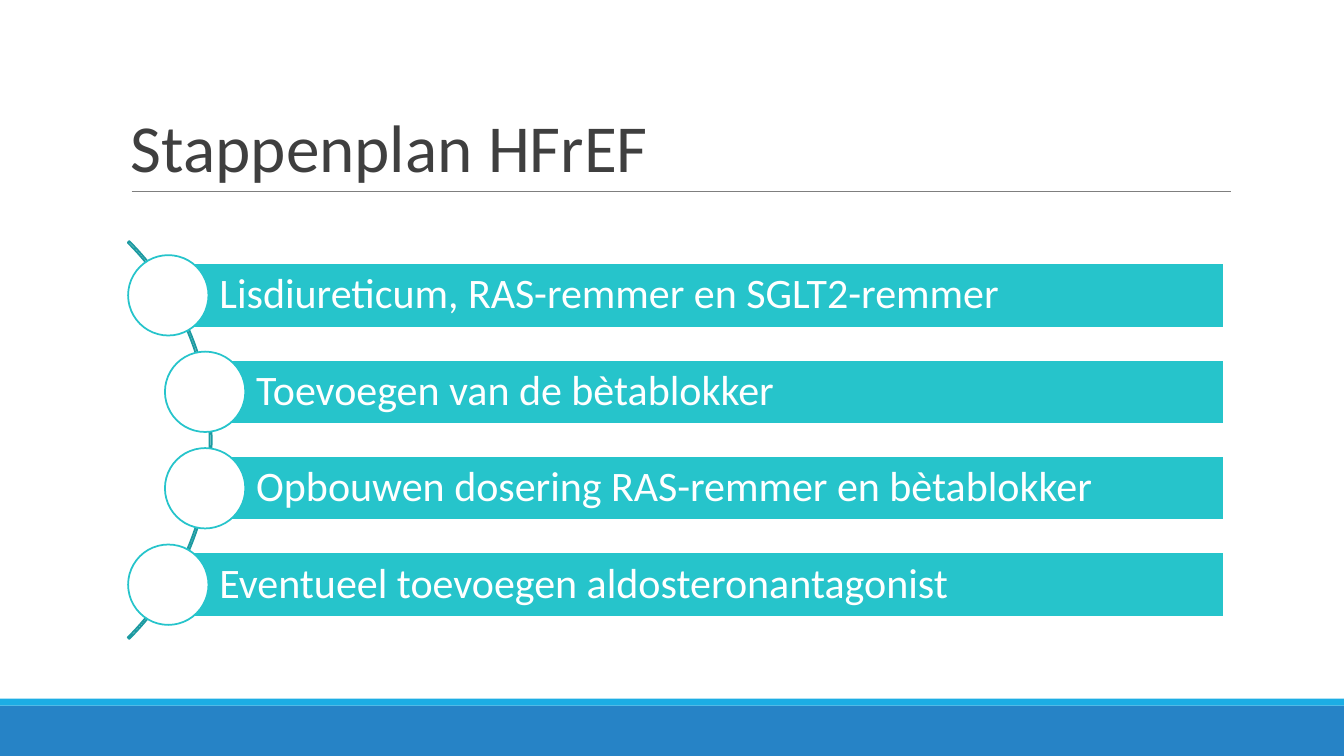
"""Build the slide with the four treatment steps for HFrEF."""
from lxml.etree import SubElement
from pptx import Presentation
from pptx.dml.color import RGBColor
from pptx.enum.shapes import MSO_CONNECTOR, MSO_SHAPE
from pptx.enum.text import MSO_ANCHOR, PP_ALIGN
from pptx.oxml.ns import qn
from pptx.util import Pt

TITLE = "Stappenplan HFrEF"
STEPS = [
    ("Lisdiureticum, RAS-remmer en SGLT2-remmer", 0),
    ("Toevoegen van de bètablokker", 1),
    ("Opbouwen dosering RAS-remmer en bètablokker", 1),
    ("Eventueel toevoegen aldosteronantagonist", 0),
]
HEX = {
    "white": "FFFFFF", "teal": "26C4CB", "arc": "1C9AA1", "title": "3F3F3F",
    "rule": "7F7F7F", "blue": "2683C6", "sky": "1CADE4",
}
FONT = "Calibri"
WIDE, HIGH = 960, 540
LEFT, RIGHT, INDENT = 120.2, 874.2, 26.3
TOP, PITCH, BAR, DOT = 188, 68.9, 45.9, 57.4
ARC = 401.8


def tint(name):
    return RGBColor.from_string(HEX[name])


def draw(slide, kind, box, fill=None, line=None):
    shape = slide.shapes.add_shape(kind, *map(Pt, box))
    shape.shadow.inherit = False
    if fill:
        shape.fill.solid()
        shape.fill.fore_color.rgb = tint(fill)
    else:
        shape.fill.background()
    if line:
        shape.line.color.rgb = tint(line)
        shape.line.width = Pt(1.25)
    else:
        shape.line.fill.background()
    return shape


def write(shape, text, size, color, space, anchor, pads):
    frame = shape.text_frame
    frame.word_wrap = True
    frame.vertical_anchor = anchor
    (frame.margin_left, frame.margin_top,
     frame.margin_right, frame.margin_bottom) = map(Pt, pads)
    para = frame.paragraphs[0]
    para.alignment = PP_ALIGN.LEFT
    para.line_spacing = space
    run = para.add_run()
    run.text = text
    run.font.name = FONT
    run.font.size = Pt(size)
    run.font.color.rgb = tint(color)


def frame_page(slide):
    draw(slide, MSO_SHAPE.RECTANGLE, (0, 504, WIDE, 36), "blue")
    draw(slide, MSO_SHAPE.RECTANGLE, (0, 499, WIDE, 5), "sky")
    rule = slide.shapes.add_connector(
        MSO_CONNECTOR.STRAIGHT, Pt(94), Pt(136.8), Pt(879), Pt(136.8))
    rule.line.color.rgb = tint("rule")
    rule.line.width = Pt(0.75)
    SubElement(rule.element.spPr, qn("a:effectLst"))
    title = slide.shapes.add_textbox(Pt(86.4), Pt(22.6), Pt(792), Pt(114.2))
    write(title, TITLE, size=48, color="title", space=0.85,
          anchor=MSO_ANCHOR.BOTTOM, pads=(7.2, 3.6, 7.2, 3.6))


def list_steps(slide):
    mid = TOP + (PITCH * (len(STEPS) - 1) + BAR) / 2
    arc = draw(slide, MSO_SHAPE.BLOCK_ARC,
               (-250.6, mid - ARC / 2, ARC, ARC), line="arc")
    for spot, value in enumerate((189, 27, 0.0039)):
        arc.adjustments[spot] = value
    for row, (text, level) in enumerate(STEPS):
        left, top = LEFT + level * INDENT, TOP + row * PITCH
        bar = draw(slide, MSO_SHAPE.RECTANGLE,
                   (left, top, RIGHT - left, BAR), "teal", "white")
        write(bar, text, size=30, color="white", space=0.9,
              anchor=MSO_ANCHOR.MIDDLE, pads=(36.5, 6, 6, 6))
        draw(slide, MSO_SHAPE.OVAL,
             (left - DOT / 2, top + (BAR - DOT) / 2, DOT, DOT),
             "white", "teal")


def main():
    deck = Presentation()
    deck.slide_width, deck.slide_height = Pt(WIDE), Pt(HIGH)
    slide = deck.slides.add_slide(deck.slide_layouts[6])
    frame_page(slide)
    list_steps(slide)
    deck.save("out.pptx")


if __name__ == "__main__":
    main()
